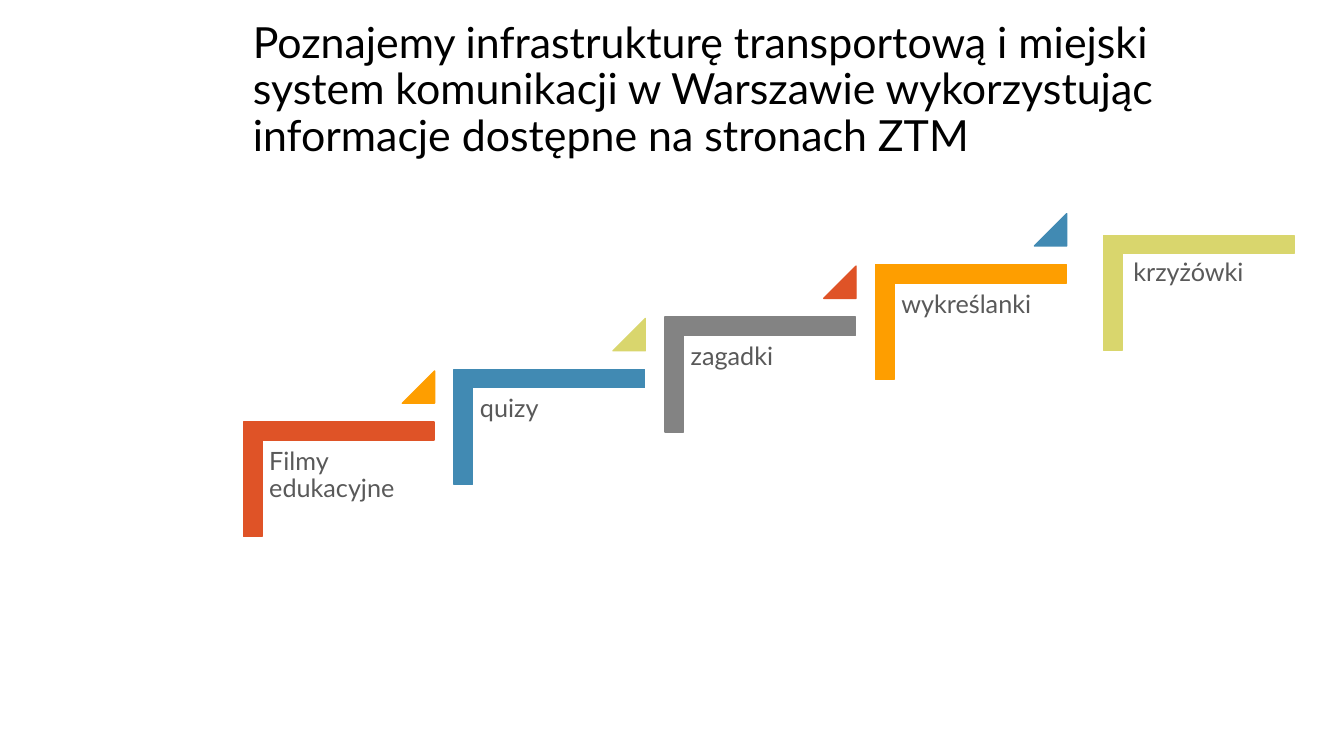
from pptx import Presentation
from pptx.dml.color import RGBColor
from pptx.enum.shapes import MSO_SHAPE
from pptx.enum.text import MSO_ANCHOR
from pptx.util import Pt

CORNER = MSO_SHAPE.CORNER
TRIANGLE = MSO_SHAPE.ISOSCELES_TRIANGLE
BOTTOM = MSO_ANCHOR.BOTTOM

PX = 9144  # 100 px to the inch
BLACK = RGBColor(0x00, 0x00, 0x00)
DARK = RGBColor(0x59, 0x59, 0x59)
RED = RGBColor(0xDF, 0x53, 0x27)
ORANGE = RGBColor(0xFE, 0x9E, 0x00)
BLUE = RGBColor(0x41, 0x8A, 0xB3)
LIME = RGBColor(0xD9, 0xD6, 0x6D)
GREY = RGBColor(0x83, 0x83, 0x83)

deck = Presentation()
deck.slide_width = 1333 * PX
deck.slide_height = 750 * PX
slide = deck.slides.add_slide(deck.slide_layouts[6])


def add_text(text, box, size, color):
    frame = slide.shapes.add_textbox(*[n * PX for n in box]).text_frame
    frame.word_wrap = True
    para = frame.paragraphs[0]
    para.text = text
    para.line_spacing = 0.9
    para.font.name = "Lato"
    para.font.size = Pt(size)
    para.font.color.rgb = color
    return frame


def add_solid(kind, box, color):
    shape = slide.shapes.add_shape(kind, *[n * PX for n in box])
    shape.shadow.inherit = False
    shape.fill.solid()
    shape.fill.fore_color.rgb = color
    shape.line.color.rgb = color
    shape.line.width = Pt(1)
    return shape


# Title
title = add_text(
    "Poznajemy infrastrukturę transportową i miejski system komunikacji "
    "w Warszawie wykorzystując informacje dostępne na stronach ZTM",
    (241, 12, 1025, 152), 30.6, BLACK)
title.vertical_anchor = BOTTOM

# Staircase: label, corner colour, triangle colour
steps = [
    ("Filmy edukacyjne", RED, ORANGE),
    ("quizy", BLUE, LIME),
    ("zagadki", GREY, RED),
    ("wykreślanki", ORANGE, BLUE),
    ("krzyżówki", LIME, None),
]
for i, (label, color, accent) in enumerate(steps):
    x, y = 279 + 209 * i, 381 - 52 * i
    spot = (x - 19, y + 57, 171, 150)
    if accent is None:  # the top step stands apart
        x, y = 1132, 196
        spot = (1117, 251, 128, 130)

    corner = add_solid(CORNER, (x, y, 114, 189), color)
    corner.rotation = 90
    corner.adjustments[0] = corner.adjustments[1] = 0.16

    frame = add_text(label, spot, 18, DARK)
    frame.margin_left = frame.margin_right = 7 * PX
    frame.margin_top = frame.margin_bottom = 7 * PX

    if accent is not None:
        mark = add_solid(TRIANGLE, (x + 120, y - 13, 32, 32), accent)
        mark.adjustments[0] = 1

deck.save("out.pptx")
